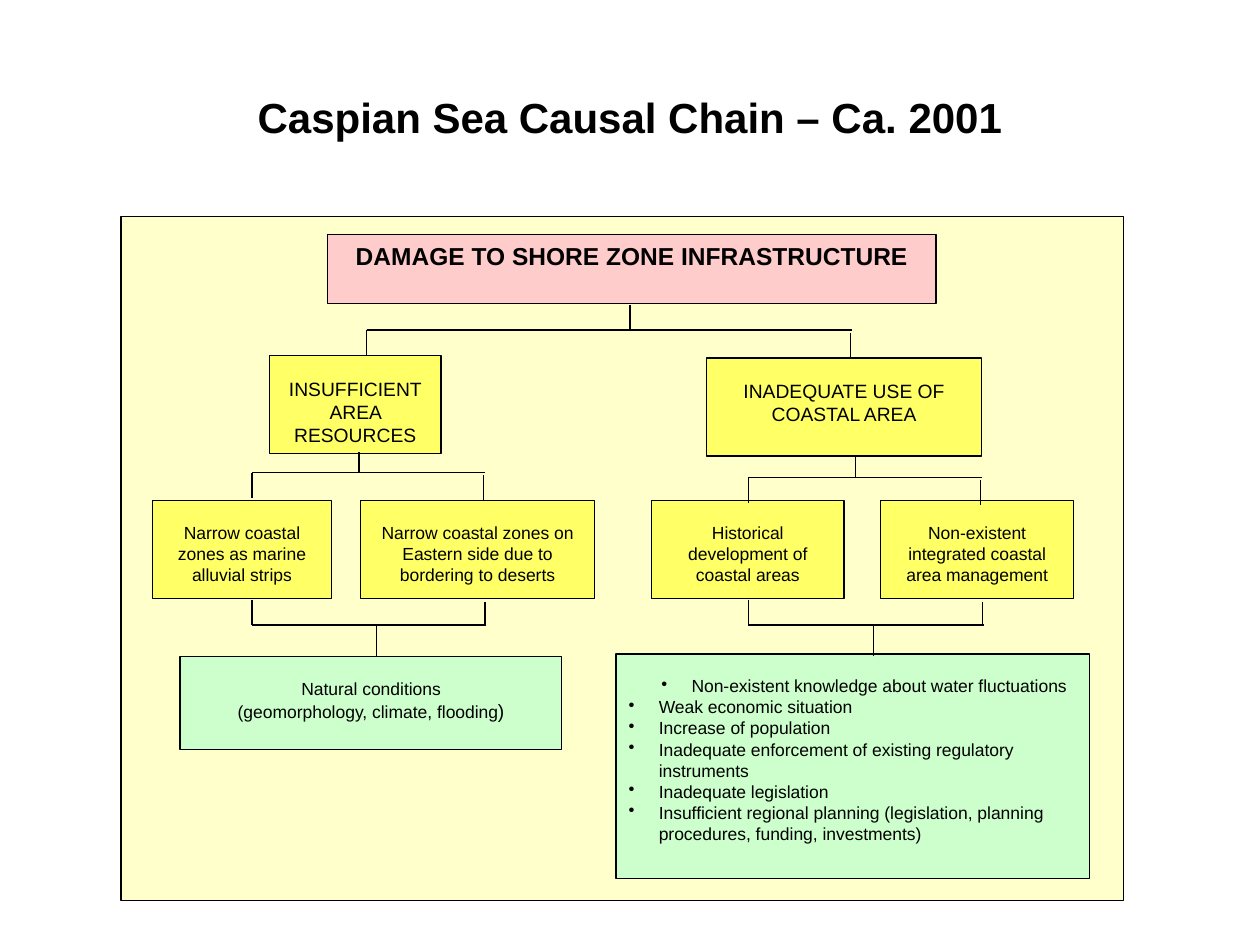
import pptx
import pptx.util
import pptx.dml.color
import pptx.enum.shapes
import pptx.enum.text
import pptx.oxml.ns
from lxml import etree

PX = 9144  # 100 px to the inch
THEME = {
    "font": "Arial", "ink": "000000", "line": 0.75,
    "panel": "FFFFCC", "pink": "FFCCCC", "yellow": "FFFF66", "green": "CCFFCC",
    "title": 24, "head": 14, "cause": 11, "body": 10,
}

TITLE = ((50, 30, 900, 125), "Caspian Sea Causal Chain – Ca. 2001")
PANEL = (96, 172, 796, 543)
HEAD = ((260, 186, 483, 55), "DAMAGE TO SHORE ZONE INFRASTRUCTURE")
CAUSES = [
    ((214, 282, 136, 78), "INSUFFICIENT AREA RESOURCES"),
    ((561, 284, 218, 78), "INADEQUATE USE OF COASTAL AREA"),
]
DETAILS = [
    (121, 142, "Narrow coastal zones as marine alluvial strips"),
    (286, 186, "Narrow coastal zones on Eastern side due to bordering to deserts"),
    (517, 153, "Historical development of coastal areas"),
    (699, 153, "Non-existent integrated coastal area management"),
]
DETAIL_TOP, DETAIL_TALL = 397, 78
NATURE = ((143, 521, 303, 74),
          "Natural conditions\n(geomorphology, climate, flooding", ")")
ROOTS = ((489, 519, 376, 178), [
    "Non-existent knowledge about water fluctuations",
    "Weak economic situation",
    "Increase of population",
    "Inadequate enforcement of existing regulatory instruments",
    "Inadequate legislation",
    "Insufficient regional planning (legislation, planning procedures, funding, investments)",
])
# bar height, bar left, bar right, stem x, outer end of stem
FORKS = [
    (262, 291, 676, 500, 242),
    (375, 200, 385, 285, 359),
    (379, 594, 779, 679, 363),
    (496, 200, 386, 299, 521),
    (496, 594, 781, 693, 521),
]
LEG, SLIP, HANG = 20, 2, 24

ALIGN = pptx.enum.text.PP_ALIGN
ANCHOR = pptx.enum.text.MSO_ANCHOR


def rgb(name):
    return pptx.dml.color.RGBColor.from_string(THEME[name])


def style(runs, size, bold=False):
    for run in runs:
        run.font.name = THEME["font"]
        run.font.size = pptx.util.Pt(THEME[size])
        run.font.bold = bold
        run.font.color.rgb = rgb("ink")


def write(shape, text, size, bold=False, align=ALIGN.CENTER,
          anchor=ANCHOR.TOP, inset=17):
    frame = shape.text_frame
    frame.word_wrap = True
    frame.vertical_anchor = anchor
    frame.margin_left = frame.margin_right = 10 * PX
    frame.margin_top, frame.margin_bottom = inset * PX, 5 * PX
    frame.text = text
    for para in frame.paragraphs:
        para.alignment = align
        style(para.runs, size, bold)
    return frame


def box(slide, area, fill):
    kind = pptx.enum.shapes.MSO_SHAPE.RECTANGLE
    shape = slide.shapes.add_shape(kind, *[n * PX for n in area])
    shape.shadow.inherit = False
    shape.fill.solid()
    shape.fill.fore_color.rgb = rgb(fill)
    shape.line.color.rgb = rgb("ink")
    shape.line.width = pptx.util.Pt(THEME["line"])
    return shape


def line(slide, *ends):
    kind = pptx.enum.shapes.MSO_CONNECTOR.STRAIGHT
    rule = slide.shapes.add_connector(kind, *[n * PX for n in ends])
    rule.line.color.rgb = rgb("ink")
    rule.line.width = pptx.util.Pt(THEME["line"])
    etree.SubElement(rule._element.spPr, pptx.oxml.ns.qn("a:effectLst"))


def fork(slide, bar, left, right, stem, far):
    """Draw a bar, its stem, and two legs on the side away from the stem."""
    line(slide, stem, far, stem, bar)
    line(slide, left, bar, right, bar)
    top = bar if far < bar else bar - LEG
    line(slide, left, top, left, top + LEG)
    low = top + SLIP
    line(slide, right - 1, low, right - 1, low + LEG if far < bar else bar)


def bullet(para, left):
    props = para._p.get_or_add_pPr()
    props.set("marL", str(left * PX))
    props.set("indent", str(-HANG * PX))
    etree.SubElement(props, pptx.oxml.ns.qn("a:buChar")).set("char", "•")


def main():
    deck = pptx.Presentation()
    deck.slide_width, deck.slide_height = 1000 * PX, 750 * PX
    slide = deck.slides.add_slide(deck.slide_layouts[6])

    box(slide, PANEL, "panel")
    area, text = TITLE
    title = slide.shapes.add_textbox(*[n * PX for n in area])
    write(title, text, "title", True, anchor=ANCHOR.MIDDLE, inset=5)

    area, text = HEAD
    write(box(slide, area, "pink"), text, "head", True, inset=5)
    for area, text in CAUSES:
        write(box(slide, area, "yellow"), text, "cause")
    for left, wide, text in DETAILS:
        area = (left, DETAIL_TOP, wide, DETAIL_TALL)
        write(box(slide, area, "yellow"), text, "body")

    area, text, close = NATURE
    frame = write(box(slide, area, "green"), text, "body")
    run = frame.paragraphs[-1].add_run()
    run.text = close
    style([run], "cause")

    area, items = ROOTS
    frame = write(box(slide, area, "green"), "\n".join(items), "body",
                  align=ALIGN.LEFT)
    for i, para in enumerate(frame.paragraphs):
        bullet(para, HANG if i else 50)

    for parts in FORKS:
        fork(slide, *parts)
    deck.save("out.pptx")


if __name__ == "__main__":
    main()
